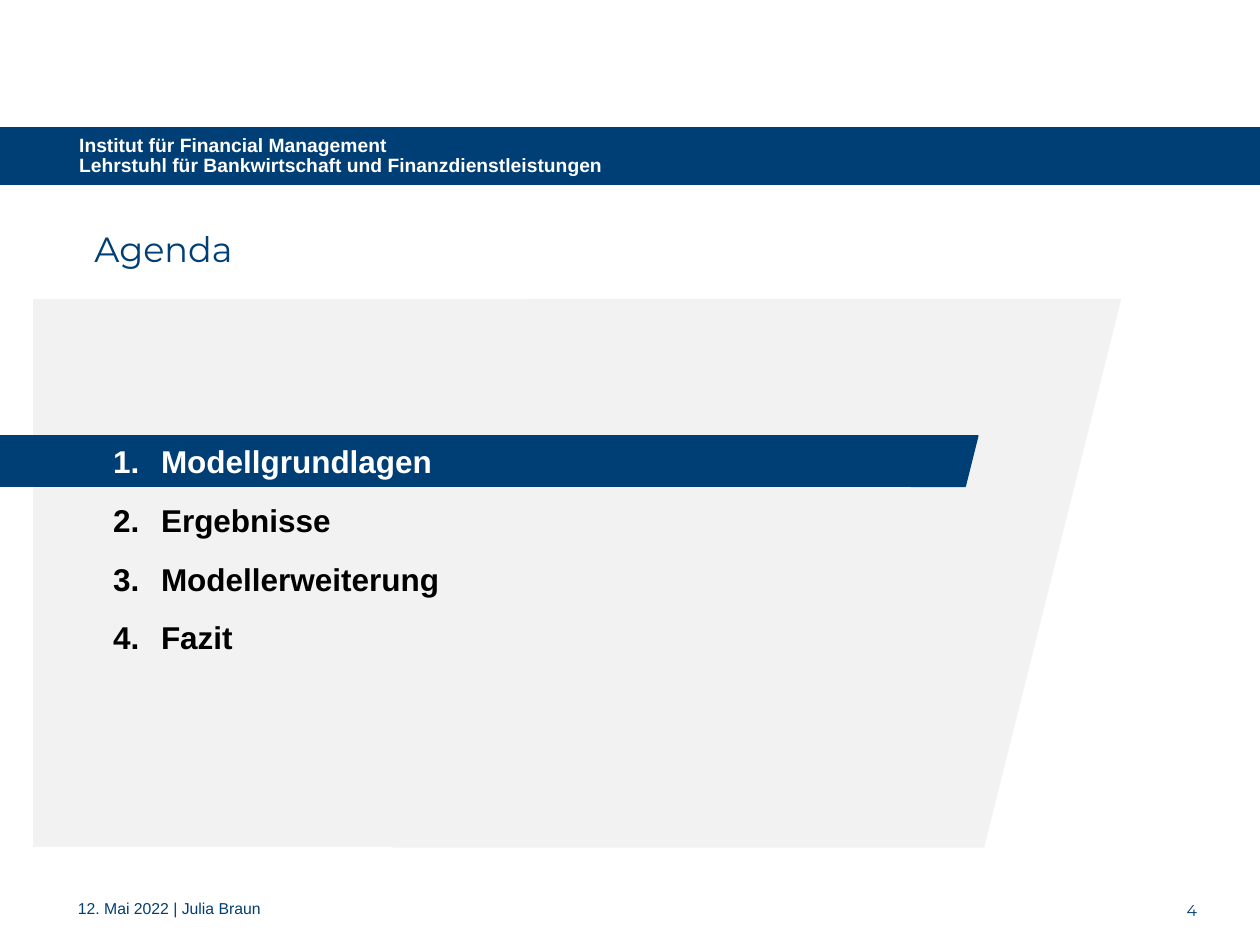
from dataclasses import dataclass

from lxml import etree
from pptx import Presentation
from pptx import util as u
from pptx.dml.color import RGBColor
from pptx.enum import shapes, text
from pptx.oxml import ns

NAVY, GREY, WHITE, BLACK = "003F75", "F2F2F2", "FFFFFF", "000000"
RECT = shapes.MSO_SHAPE.RECTANGLE
SLANT = shapes.MSO_SHAPE.PARALLELOGRAM


@dataclass
class Block:
    kind: shapes.MSO_SHAPE
    left: float
    top: float
    width: float
    height: float
    color: str
    line: float = 1


@dataclass
class Label:
    words: str
    left: float
    top: float
    width: float
    height: float
    size: float
    font: str = "Arial"
    color: str = NAVY
    bold: bool = False


def rgb(value: str) -> RGBColor:
    return RGBColor.from_string(value)


def draw_block(parent, block: Block) -> None:
    shape = parent.add_shape(
        block.kind, u.Inches(block.left), u.Inches(block.top),
        u.Inches(block.width), u.Inches(block.height))
    shape.shadow.inherit = False
    shape.fill.solid()
    shape.fill.fore_color.rgb = rgb(block.color)
    shape.line.color.rgb = rgb(block.color)
    shape.line.width = u.Pt(block.line)


def draw_label(page, label: Label):
    box = page.shapes.add_textbox(
        u.Inches(label.left), u.Inches(label.top),
        u.Inches(label.width), u.Inches(label.height))
    frame = box.text_frame
    frame.word_wrap = True
    frame.text = label.words
    for para in frame.paragraphs:
        for span in para.runs:
            span.font.name = label.font
            span.font.size = u.Pt(label.size)
            span.font.bold = label.bold
            span.font.color.rgb = rgb(label.color)
    return frame


def number_item(para) -> None:
    para.space_after = u.Pt(12)
    props = para._p.get_or_add_pPr()
    props.set("marL", str(u.Inches(0.38)))
    props.set("indent", str(u.Inches(-0.38)))
    number = etree.SubElement(props, ns.qn("a:buAutoNum"))
    number.set("type", "arabicPeriod")


def main() -> None:
    deck = Presentation()
    deck.slide_width, deck.slide_height = u.Inches(10), u.Inches(7.5)
    page = deck.slides.add_slide(deck.slide_layouts[6])

    # Header band
    draw_block(page.shapes, Block(RECT, 0, 1.01, 10, 0.45, NAVY, 0.75))
    header = draw_label(page, Label(
        "Institut für Financial Management\v"
        "Lehrstuhl für Bankwirtschaft und Finanzdienstleistungen",
        0.53, 1.01, 8.98, 0.46, 11, color=WHITE, bold=True))
    header.vertical_anchor = text.MSO_ANCHOR.MIDDLE
    header.paragraphs[0].line_spacing = 0.9

    # Title
    draw_label(page, Label("Agenda", 0.65, 1.76, 8.31, 0.63, 20, "Montserrat"))

    # Slanted panel and the bar marking the current item
    panel = [Block(RECT, 0.27, 2.38, 7.34, 4.34, GREY),
             Block(SLANT, 3.12, 2.38, 5.77, 4.34, GREY)]
    marker = [Block(SLANT, 7.23, 3.46, 0.53, 0.4, NAVY),
              Block(RECT, 0, 3.46, 7.34, 0.4, NAVY)]
    for blocks in (panel, marker):
        group = page.shapes.add_group_shape()
        for block in blocks:
            draw_block(group.shapes, block)

    # Agenda items, the current one in white
    items = ["Modellgrundlagen", "Ergebnisse", "Modellerweiterung", "Fazit"]
    agenda = draw_label(page, Label(
        "\n".join(items), 0.8, 3.46, 6.97, 3.03, 18, color=BLACK, bold=True))
    for para in agenda.paragraphs:
        number_item(para)
    agenda.paragraphs[0].runs[0].font.color.rgb = rgb(WHITE)

    # Footer
    footer = draw_label(page, Label(
        "12. Mai 2022 | Julia Braun", 0.52, 7.1, 8.09, 0.26, 9))
    footer.paragraphs[0].line_spacing = 0.9
    number = draw_label(page, Label(
        "4", 8.99, 7.15, 0.51, 0.15, 9, "Montserrat"))
    number.margin_left = number.margin_right = 0
    number.margin_top = number.margin_bottom = 0
    number.paragraphs[0].alignment = text.PP_ALIGN.RIGHT

    deck.save("out.pptx")


if __name__ == "__main__":
    main()
